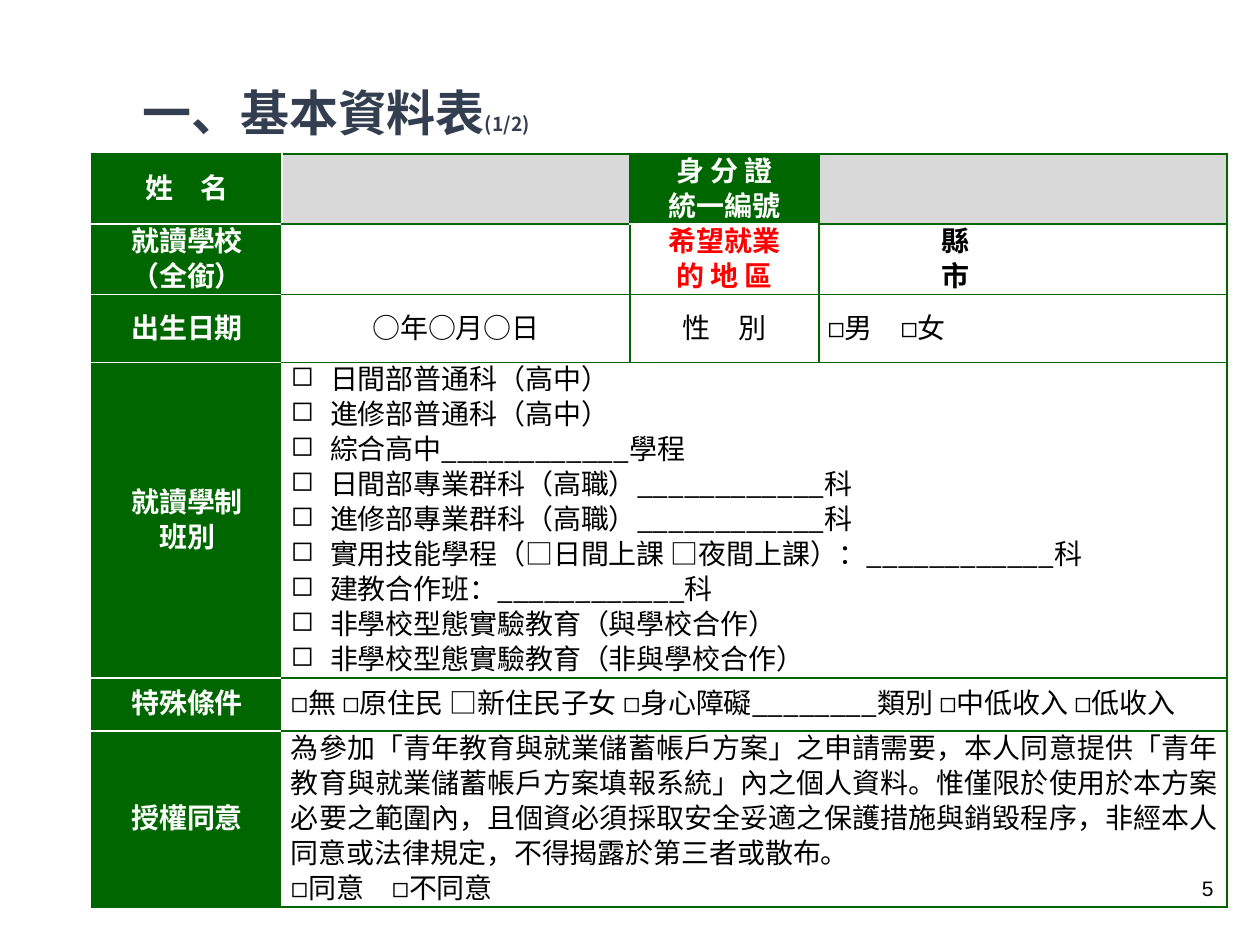
from dataclasses import dataclass

from lxml import etree
from pptx import Presentation
from pptx import util as u
from pptx.dml.color import RGBColor
from pptx.enum import text
from pptx.oxml.ns import qn


@dataclass(frozen=True)
class Theme:
    green: str = "006600"
    white: str = "FFFFFF"
    gray: str = "D9D9D9"
    red: str = "FF0000"
    black: str = "000000"
    slate: str = "333F50"
    font: str = "Noto Sans CJK SC"
    number_font: str = "Arial"
    title: int = 28
    counter: int = 11
    body: int = 16
    number: int = 12
    leading: int = 20


THEME = Theme()
ALIGN = text.PP_ALIGN
MIDDLE = text.MSO_ANCHOR.MIDDLE


def add_span(para, words, size=THEME.body, color=THEME.black, bold=False, font=THEME.font):
    span = para.add_run()
    span.text = words
    span.font.size = u.Pt(size)
    span.font.bold = bold
    span.font.name = font
    span.font.color.rgb = RGBColor.from_string(color)
    etree.SubElement(span._r.get_or_add_rPr(), qn("a:ea"), typeface=font)


def write(frame, lines, align=ALIGN.LEFT, indent=0, bullet=None, leading=None, **style):
    for index, line in enumerate(lines):
        para = frame.add_paragraph() if index else frame.paragraphs[0]
        para.alignment = align
        if leading:
            para.line_spacing = u.Pt(leading)
        props = para._p.get_or_add_pPr()
        if indent:
            props.set("marL", str(u.Inches(indent)))
        if bullet:
            props.set("indent", str(-u.Inches(indent)))
            etree.SubElement(props, qn("a:buChar"), char=bullet)
        add_span(para, line, **style)


def set_borders(cell, **colors):
    props = cell._tc.get_or_add_tcPr()
    for side in "LRTB":
        line = etree.SubElement(props, qn(f"a:ln{side}"), w=str(u.Pt(1)))
        fill = etree.SubElement(line, qn("a:solidFill"))
        etree.SubElement(fill, qn("a:srgbClr"), val=colors.get(side, THEME.green))


class FormPage:
    def __init__(self, deck, theme):
        self.deck = deck
        self.theme = theme
        self.page = deck.slides.add_slide(deck.slide_layouts[5])

    def area(self, left, top, width, height):
        across, down = self.deck.slide_width, self.deck.slide_height
        return int(left * across), int(top * down), int(width * across), int(height * down)

    def title(self, place, words, counter):
        box = self.page.shapes.title
        box.left, box.top, box.width, box.height = self.area(*place)
        frame = box.text_frame
        frame.word_wrap = True
        frame.auto_size = text.MSO_AUTO_SIZE.NONE
        frame.vertical_anchor = MIDDLE
        style = {"color": self.theme.slate, "bold": True}
        write(frame, [words], size=self.theme.title, **style)
        add_span(frame.paragraphs[0], counter, size=self.theme.counter, **style)

    def number(self, place, words):
        frame = self.page.shapes.add_textbox(*self.area(*place)).text_frame
        frame.word_wrap = True
        frame.vertical_anchor = MIDDLE
        write(frame, [words], align=ALIGN.RIGHT, size=self.theme.number,
              font=self.theme.number_font)

    def table(self, place, columns, rows):
        grid = self.page.shapes.add_table(len(rows), len(columns), *self.area(*place)).table
        grid.first_row = grid.horz_banding = False
        for column, width in zip(grid.columns, columns):
            column.width = u.Inches(width)
        for row, height in zip(grid.rows, rows):
            row.height = u.Inches(height)
        for cell in grid.iter_cells():
            cell.margin_left = cell.margin_right = u.Inches(0.07)
            cell.margin_top = cell.margin_bottom = 0
            cell.vertical_anchor = MIDDLE
        return grid

    def cell(self, cell, lines=(), fill=None, edges=None, **style):
        set_borders(cell, **(edges or {}))
        if fill:
            cell.fill.solid()
            cell.fill.fore_color.rgb = RGBColor.from_string(fill)
        else:
            cell.fill.background()
        write(cell.text_frame, lines, leading=self.theme.leading, **style)

    def header(self, cell, lines, **edges):
        self.cell(cell, lines, fill=self.theme.green, edges=edges, align=ALIGN.CENTER,
                  color=self.theme.white, bold=True)


HEADERS = [
    ["姓　名"],
    ["就讀學校", "（全銜）"],
    ["出生日期"],
    ["就讀學制", "班別"],
    ["特殊條件"],
    ["授權同意"],
]
PROGRAMS = [
    "日間部普通科（高中）",
    "進修部普通科（高中）",
    "綜合高中____________學程",
    "日間部專業群科（高職）____________科",
    "進修部專業群科（高職）____________科",
    "實用技能學程（□日間上課 □夜間上課）：____________科",
    "建教合作班：____________科",
    "非學校型態實驗教育（與學校合作）",
    "非學校型態實驗教育（非與學校合作）",
]
CONDITIONS = "◻無 ◻原住民 □新住民子女 ◻身心障礙________類別 ◻中低收入 ◻低收入"
CONSENT = (
    "為參加「青年教育與就業儲蓄帳戶方案」之申請需要，本人同意提供「青年教育與就業儲蓄帳戶方案填報系統」"
    "內之個人資料。惟僅限於使用於本方案必要之範圍內，且個資必須採取安全妥適之保護措施與銷毀程序，"
    "非經本人同意或法律規定，不得揭露於第三者或散布。"
)


def main():
    deck = Presentation()
    deck.slide_width, deck.slide_height = u.Inches(10), u.Inches(7.5)
    form = FormPage(deck, THEME)
    form.title((0.103, 0.08, 0.5, 0.076), "一、基本資料表", "(1/2)")
    form.number((0.798, 0.92, 0.175, 0.04), "5")

    grid = form.table((0.073, 0.163, 0.901, 0.79), [1.51, 2.76, 1.5, 3.24],
                      [0.55, 0.56, 0.54, 2.5, 0.42, 1.4])
    last = len(HEADERS) - 1
    for row, lines in enumerate(HEADERS):
        edges = {"R": THEME.white}
        if row > 0:
            edges["T"] = THEME.white
        if row < last:
            edges["B"] = THEME.white
        form.header(grid.cell(row, 0), lines, **edges)

    form.cell(grid.cell(0, 1), fill=THEME.gray, edges={"L": THEME.white})
    form.header(grid.cell(0, 2), ["身 分 證", "統一編號"], B=THEME.white)
    form.cell(grid.cell(0, 3), fill=THEME.gray)

    form.cell(grid.cell(1, 1), edges={"L": THEME.white})
    form.cell(grid.cell(1, 2), ["希望就業", "的 地 區"], edges={"T": THEME.white},
              align=ALIGN.CENTER, color=THEME.red, bold=True)
    form.cell(grid.cell(1, 3), ["縣", "市"], indent=0.9, bold=True)

    form.cell(grid.cell(2, 1), ["○年○月○日"], edges={"L": THEME.white}, align=ALIGN.CENTER)
    form.cell(grid.cell(2, 2), ["性　別"], align=ALIGN.CENTER)
    form.cell(grid.cell(2, 3), ["◻男　◻女"])

    for row in range(3, last + 1):
        grid.cell(row, 1).merge(grid.cell(row, 3))
        for column in (2, 3):
            form.cell(grid.cell(row, column))
    form.cell(grid.cell(3, 1), PROGRAMS, edges={"L": THEME.white}, indent=0.31, bullet="◻")
    form.cell(grid.cell(4, 1), [CONDITIONS], edges={"L": THEME.white})
    consent = grid.cell(5, 1)
    form.cell(consent, [CONSENT, "◻同意　◻不同意"], edges={"L": THEME.white})
    consent.text_frame.paragraphs[0].alignment = ALIGN.JUSTIFY

    deck.save("out.pptx")


if __name__ == "__main__":
    main()
